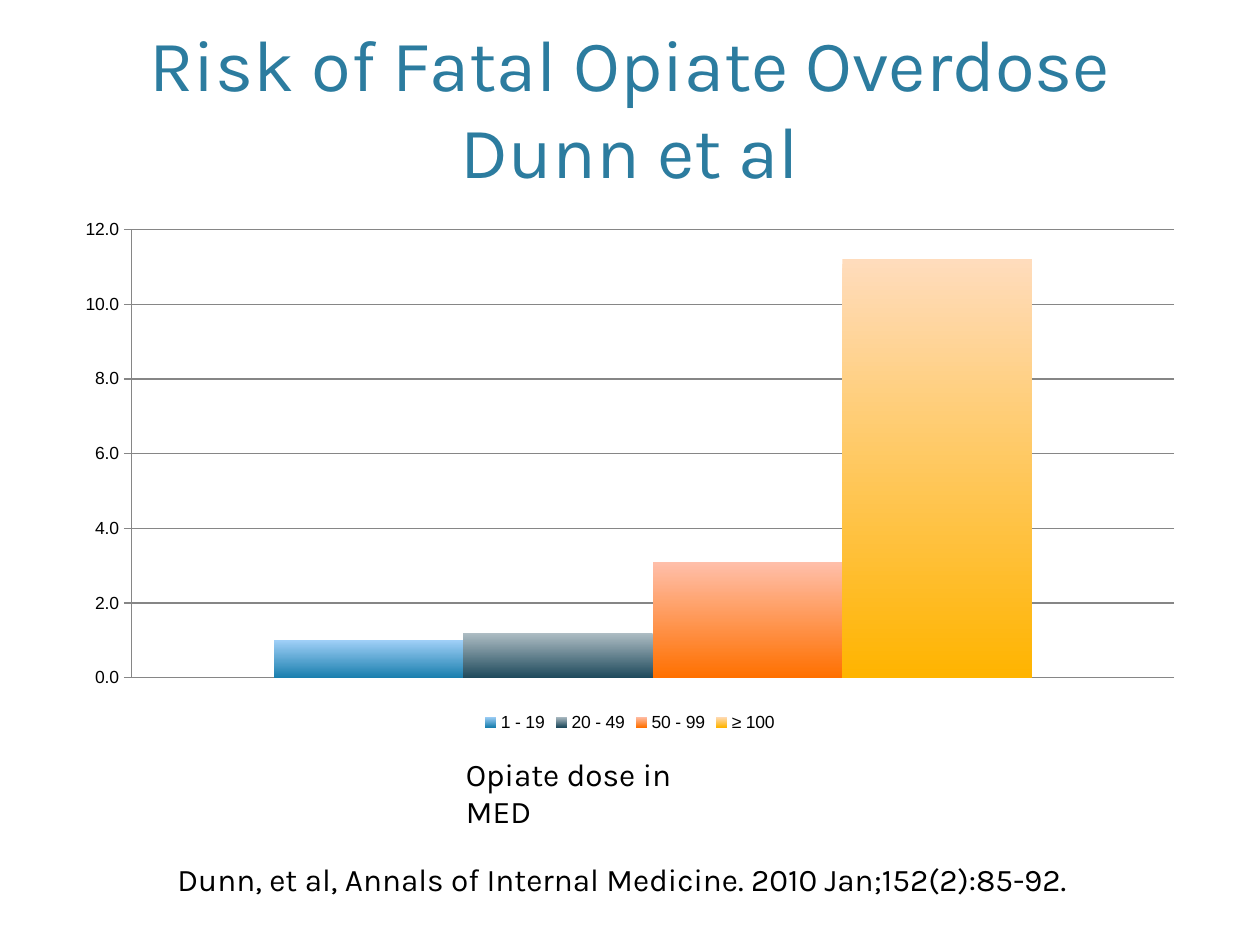
from pptx import Presentation
from pptx import util as u
from pptx.chart.data import CategoryChartData
from pptx.dml.color import RGBColor
from pptx.enum import chart as kinds, text

COLOURS = {"title": "2C7C9F", "text": "000000", "grid": "868686"}
# Dose band: relative risk, top colour, bottom colour
DOSES = {
    "1 - 19": (1, "9FCFF7", "1A7FAE"),
    "20 - 49": (1.2, "AEBDC4", "1F4A5C"),
    "50 - 99": (3.1, "FFBFAA", "FF7000"),
    "≥ 100": (11.2, "FFDCBC", "FFB400"),
}


def colour(name):
    return RGBColor.from_string(COLOURS.get(name, name))


def write(box, wording, size, shade, **frame_format):
    frame = box.text_frame
    frame.text = wording
    frame_format = {"word_wrap": True, "auto_size": text.MSO_AUTO_SIZE.NONE, **frame_format}
    for key, value in frame_format.items():
        setattr(frame, key, value)
    for span in frame.paragraphs[0].runs:
        for key, value in {"name": "Karla", "size": u.Pt(size)}.items():
            setattr(span.font, key, value)
        span.font.color.rgb = colour(shade)


deck = Presentation()
deck.slide_width, deck.slide_height = u.Inches(10), u.Inches(7.5)
page = deck.slides.add_slide(deck.slide_layouts[5])

# Title
title = page.shapes.title
place = {"left": 0.6, "top": 0.12, "width": 8.8, "height": 1.46}
for key, value in place.items():
    setattr(title, key, u.Inches(value))
write(title, "Risk of Fatal Opiate Overdose\vDunn et al", 41.4, "title",
      vertical_anchor=text.MSO_ANCHOR.BOTTOM)
title.text_frame.paragraphs[0].alignment = text.PP_ALIGN.CENTER

# Axis caption and citation
captions = [
    ("Opiate dose in MED", 3.6, 5.94, 2.24),
    ("Dunn, et al, Annals of Internal Medicine. 2010 Jan;152(2):85-92.", 1.31, 6.78, 7.35),
]
for wording, left, top, width in captions:
    box = page.shapes.add_textbox(*map(u.Inches, (left, top, width, 0.4)))
    write(box, wording, 18, "text")

# Risk chart: one series per dose band
data = CategoryChartData(number_format="0.0")
data.categories = ["1"]
for dose, (risk, _, _) in DOSES.items():
    data.add_series(dose, [risk])
chart = page.shapes.add_chart(kinds.XL_CHART_TYPE.COLUMN_CLUSTERED,
                              *map(u.Inches, (0.5, 1.66, 9, 4.19)), data).chart
chart.has_title = False
for key, value in {"name": "Arial", "size": u.Pt(10)}.items():
    setattr(chart.font, key, value)
chart.font.color.rgb = colour("text")

# Bars with a vertical gradient
plot = chart.plots[0]
plot.gap_width, plot.overlap, plot.vary_by_categories = 150, 0, False
for series, (_, top_colour, bottom_colour) in zip(plot.series, DOSES.values()):
    fill = series.format.fill
    fill.gradient()
    fill.gradient_angle = 270
    for stop, shade, position in zip(fill.gradient_stops, (top_colour, bottom_colour), (0, 1)):
        stop.color.rgb = colour(shade)
        stop.position = position

# Axes and legend
chart.category_axis.visible = False
axis = chart.value_axis
axis_format = {"minimum_scale": 0, "maximum_scale": 12, "major_unit": 2,
               "has_major_gridlines": True,
               "major_tick_mark": kinds.XL_TICK_MARK.OUTSIDE}
for key, value in axis_format.items():
    setattr(axis, key, value)
axis.tick_labels.number_format = "0.0"
axis.tick_labels.number_format_is_linked = False
for line in (axis.format.line, axis.major_gridlines.format.line):
    line.color.rgb = colour("grid")
    line.width = u.Pt(0.75)
chart.has_legend = True
chart.legend.position = kinds.XL_LEGEND_POSITION.BOTTOM
chart.legend.include_in_layout = False

deck.save("out.pptx")
